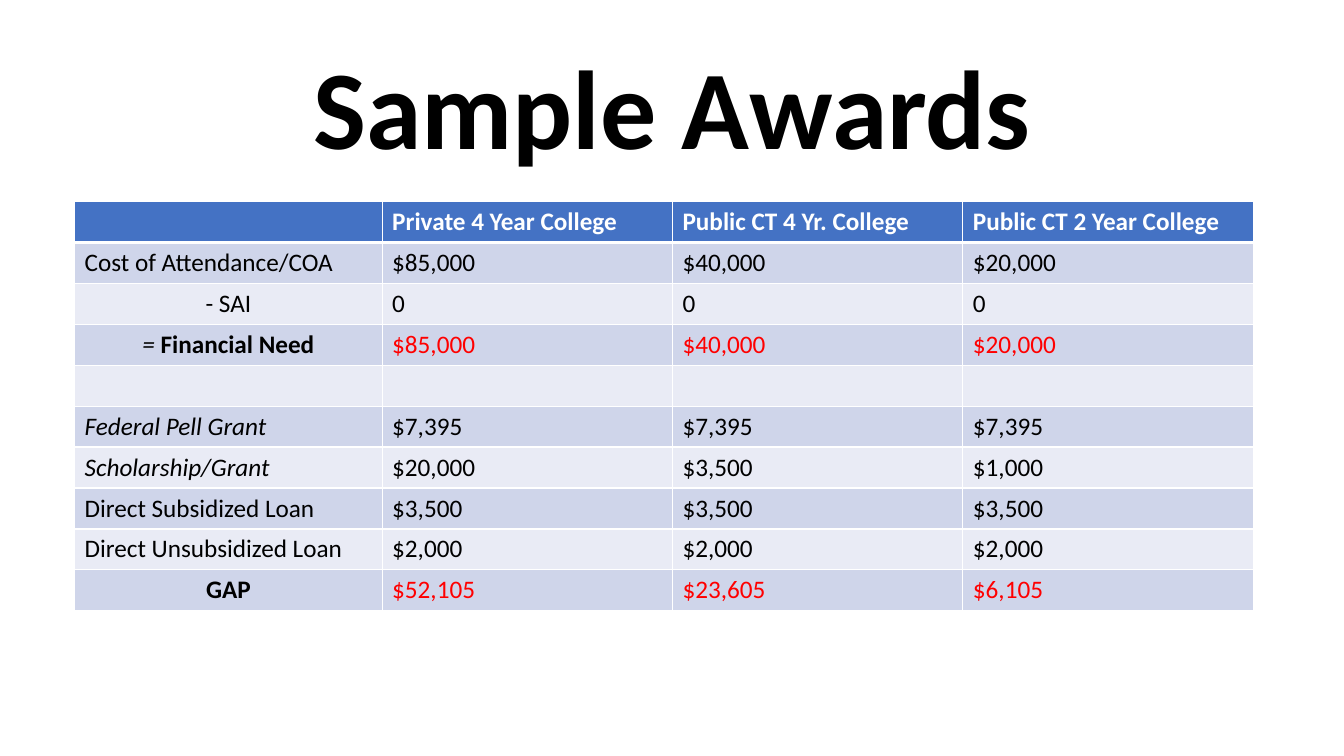
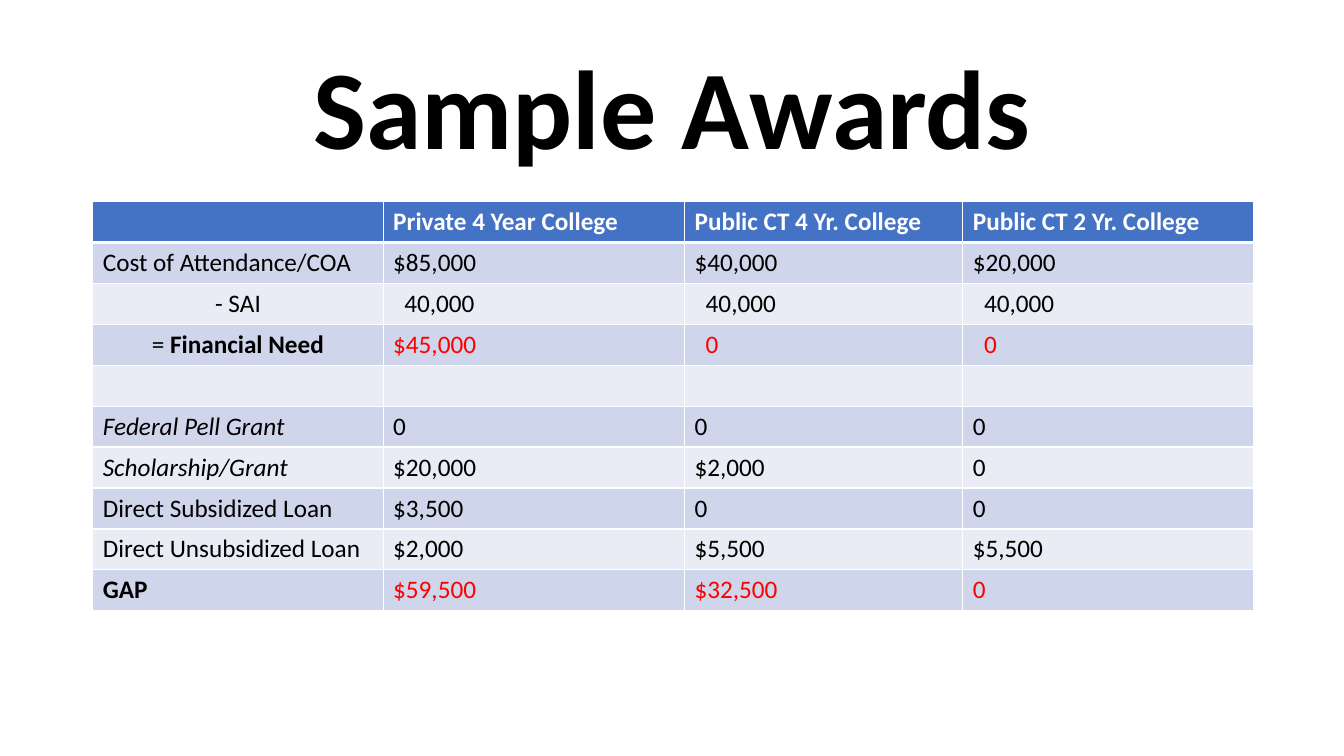
from dataclasses import dataclass

from lxml.etree import SubElement
from pptx import Presentation
from pptx.dml.color import RGBColor
from pptx.enum.text import MSO_ANCHOR, MSO_AUTO_SIZE, PP_ALIGN
from pptx.oxml.ns import qn
from pptx.util import Inches, Pt

FONT = "Calibri"
BLACK, WHITE, RED = "000000", "FFFFFF", "FF0000"
HEADER_FILL, BAND_FILLS = "4472C4", ("CFD5EA", "E9EBF5")
ROW_HEIGHT = 0.406
CELL_MARGIN, AMOUNT_INDENT = 0.1, 0.11
THIN, THICK = 1, 3


@dataclass(frozen=True)
class Run:
    text: str
    bold: bool = False
    italic: bool = False
    color: str = BLACK


@dataclass(frozen=True)
class AwardRow:
    label: tuple[Run, ...] = ()
    amounts: tuple[str, ...] = ("", "", "")
    centered: bool = False
    color: str = BLACK
    indented: tuple[int, ...] = ()


@dataclass(frozen=True)
class AwardSlide:
    left: float
    widths: tuple[float, ...]
    colleges: tuple[str, ...]
    rows: tuple[AwardRow, ...]


COST = (Run("Cost of Attendance/COA"),)
SAI = (Run("- SAI"),)
NEED = Run("Financial Need", bold=True)
PELL = (Run("Federal Pell Grant", italic=True),)
SCHOLARSHIP = (Run("Scholarship/Grant", italic=True),)
SUBSIDIZED = (Run("Direct Subsidized Loan"),)
UNSUBSIDIZED = (Run("Direct Unsubsidized Loan"),)
GAP = (Run("GAP", bold=True),)

AWARD_SLIDES = (
    AwardSlide(
        0.74,
        (3.05, 2.88, 2.88, 2.88),
        ("Private 4 Year College", "Public CT 4 Yr. College", "Public CT 2 Year College"),
        (
            AwardRow(COST, ("$85,000", "$40,000", "$20,000")),
            AwardRow(SAI, ("0", "0", "0"), centered=True),
            AwardRow((Run("= ", italic=True), NEED), ("$85,000", "$40,000", "$20,000"),
                     centered=True, color=RED),
            AwardRow(),
            AwardRow(PELL, ("$7,395", "$7,395", "$7,395")),
            AwardRow(SCHOLARSHIP, ("$20,000", "$3,500", "$1,000")),
            AwardRow(SUBSIDIZED, ("$3,500", "$3,500", "$3,500")),
            AwardRow(UNSUBSIDIZED, ("$2,000", "$2,000", "$2,000")),
            AwardRow(GAP, ("$52,105", "$23,605", "$6,105"), centered=True, color=RED),
        ),
    ),
    AwardSlide(
        0.92,
        (2.88, 2.99, 2.76, 2.88),
        ("Private 4 Year College", "Public CT 4 Yr. College", "Public CT 2 Yr. College"),
        (
            AwardRow(COST, ("$85,000", "$40,000", "$20,000")),
            AwardRow(SAI, ("40,000", "40,000", "40,000"), centered=True, indented=(1, 2, 3)),
            AwardRow((Run("= "), NEED), ("$45,000", "0", "0"),
                     centered=True, color=RED, indented=(2, 3)),
            AwardRow(),
            AwardRow(PELL, ("0", "0", "0")),
            AwardRow(SCHOLARSHIP, ("$20,000", "$2,000", "0")),
            AwardRow(SUBSIDIZED, ("$3,500", "0", "0")),
            AwardRow(UNSUBSIDIZED, ("$2,000", "$5,500", "$5,500")),
            AwardRow(GAP, ("$59,500", "$32,500", "0"), color=RED),
        ),
    ),
)


def paint(color_format, color: str) -> None:
    color_format.rgb = RGBColor.from_string(color)


def apply(target, values: dict) -> None:
    for attribute, value in values.items():
        setattr(target, attribute, value)


def add_run(paragraph, content: Run, size: int) -> None:
    run = paragraph.add_run()
    run.text = content.text
    apply(run.font, {"name": FONT, "size": Pt(size),
                     "bold": content.bold, "italic": content.italic})
    paint(run.font.color, content.color)


def add_title(slide, text: str) -> None:
    title = slide.shapes.title
    apply(title, {"left": Inches(0.92), "top": Inches(0.4),
                  "width": Inches(11.5), "height": Inches(1.45)})
    apply(title.text_frame, {"word_wrap": True, "auto_size": MSO_AUTO_SIZE.NONE,
                             "vertical_anchor": MSO_ANCHOR.MIDDLE})
    paragraph = title.text_frame.paragraphs[0]
    apply(paragraph, {"alignment": PP_ALIGN.CENTER, "line_spacing": 0.9})
    add_run(paragraph, Run(text, bold=True), 80)


def add_borders(cell, top: int, bottom: int) -> None:
    properties = cell._tc.get_or_add_tcPr()
    for side, points in (("L", THIN), ("R", THIN), ("T", top), ("B", bottom)):
        border = SubElement(properties, qn(f"a:ln{side}"), w=str(Pt(points)))
        SubElement(SubElement(border, qn("a:solidFill")), qn("a:srgbClr"), val=WHITE)


def fill_cell(cell, runs: tuple[Run, ...], fill: str, top: int = THIN,
              bottom: int = THIN, centered: bool = False, indented: bool = False) -> None:
    add_borders(cell, top, bottom)
    cell.fill.solid()
    paint(cell.fill.fore_color, fill)
    cell.margin_left = Inches(CELL_MARGIN + AMOUNT_INDENT * indented)
    paragraph = cell.text_frame.paragraphs[0]
    paragraph.alignment = PP_ALIGN.CENTER if centered else PP_ALIGN.LEFT
    for run in runs:
        add_run(paragraph, run, 18)


def add_awards(slide, awards: AwardSlide) -> None:
    row_count = len(awards.rows) + 1
    table = slide.shapes.add_table(
        row_count, len(awards.widths), Inches(awards.left), Inches(2),
        Inches(sum(awards.widths)), Inches(ROW_HEIGHT * row_count)).table
    table.horz_banding = False
    for column, width in zip(table.columns, awards.widths):
        column.width = Inches(width)
    for table_row in table.rows:
        table_row.height = Inches(ROW_HEIGHT)

    for column, college in enumerate(("", *awards.colleges)):
        heading = (Run(college, bold=True, color=WHITE),) if college else ()
        fill_cell(table.cell(0, column), heading, HEADER_FILL, bottom=THICK)

    for index, row in enumerate(awards.rows):
        fill = BAND_FILLS[index % 2]
        top = THIN if index else THICK
        fill_cell(table.cell(index + 1, 0), row.label, fill, top, centered=row.centered)
        for column, amount in enumerate(row.amounts, start=1):
            figure = (Run(amount, color=row.color),) if amount else ()
            fill_cell(table.cell(index + 1, column), figure, fill, top,
                      indented=column in row.indented)


def main() -> None:
    deck = Presentation()
    apply(deck, {"slide_width": Inches(13.33), "slide_height": Inches(7.5)})
    title_only = deck.slide_layouts[5]
    for awards in AWARD_SLIDES:
        slide = deck.slides.add_slide(title_only)
        add_title(slide, "Sample Awards")
        add_awards(slide, awards)
    deck.save("out.pptx")


if __name__ == "__main__":
    main()
